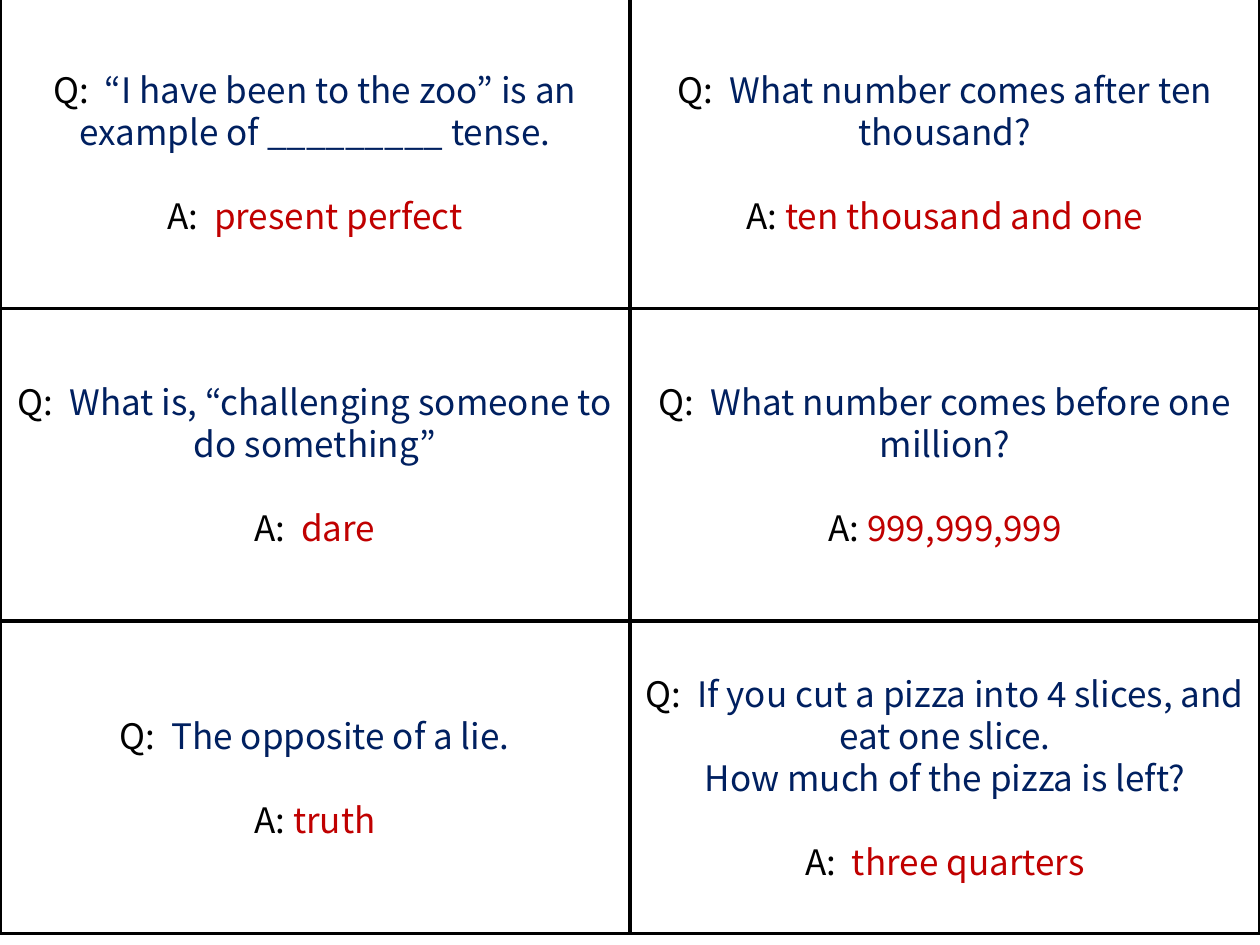
from dataclasses import dataclass

from pptx import Presentation
from pptx import util as u
from pptx.dml.color import RGBColor
from pptx.enum import shapes, text

COLOURS = {
    "card": "FFFFFF",
    "label": "000000",
    "question": "002060",
    "answer": "C00000",
}
FONT_NAME = "Noto Sans CJK KR"
FONT_SIZE = u.Pt(20)
ANSWER_GAP = u.Pt(24)
ROWS = 3
CARD_WIDTH = u.Cm(12.7)
CARD_HEIGHT = u.Cm(6.3)
GRID_TOP = u.Cm(-0.08)


@dataclass
class Card:
    question: list[str]
    answer: str
    answer_label: str = "A: "


CARDS = [
    Card(["“I have been to the zoo” is an example of _________ tense."],
         "present perfect", "A:  "),
    Card(["What is, “challenging someone to do something”"], "dare", "A:  "),
    Card(["The opposite of a lie."], "truth"),
    Card(["What number comes after ten thousand?"], "ten thousand and one"),
    Card(["What number comes before one million?"], "999,999,999"),
    Card(["If you cut a pizza into 4 slices, and eat one slice.",
          "How much of the pizza is left?"], "three quarters", "A:  "),
]


def colour(name: str) -> RGBColor:
    return RGBColor.from_string(COLOURS[name])


def add_run(paragraph, content: str, colour_name: str) -> None:
    run = paragraph.add_run()
    run.text = content
    run.font.name = FONT_NAME
    run.font.size = FONT_SIZE
    run.font.color.rgb = colour(colour_name)


def add_card(slide, card: Card, column: int, row: int) -> None:
    shape = slide.shapes.add_shape(
        shapes.MSO_SHAPE.RECTANGLE,
        column * CARD_WIDTH, GRID_TOP + row * CARD_HEIGHT,
        CARD_WIDTH, CARD_HEIGHT)
    shape.shadow.inherit = False
    shape.fill.solid()
    shape.fill.fore_color.rgb = colour("card")
    shape.line.color.rgb = colour("label")
    shape.line.width = u.Pt(2)

    frame = shape.text_frame
    frame.word_wrap = True
    frame.vertical_anchor = text.MSO_ANCHOR.MIDDLE
    paragraph = frame.paragraphs[0]
    add_run(paragraph, "Q:  ", "label")
    add_run(paragraph, card.question[0], "question")
    for line in card.question[1:]:
        add_run(frame.add_paragraph(), line, "question")

    paragraph = frame.add_paragraph()
    paragraph.space_before = ANSWER_GAP
    add_run(paragraph, card.answer_label, "label")
    add_run(paragraph, card.answer, "answer")
    for paragraph in frame.paragraphs:
        paragraph.alignment = text.PP_ALIGN.CENTER


def main() -> None:
    presentation = Presentation()
    presentation.slide_width = u.Cm(25.4)
    presentation.slide_height = u.Cm(19.05)
    slide = presentation.slides.add_slide(presentation.slide_layouts[6])
    for index, card in enumerate(CARDS):
        column, row = divmod(index, ROWS)
        add_card(slide, card, column, row)
    presentation.save("out.pptx")


if __name__ == "__main__":
    main()
